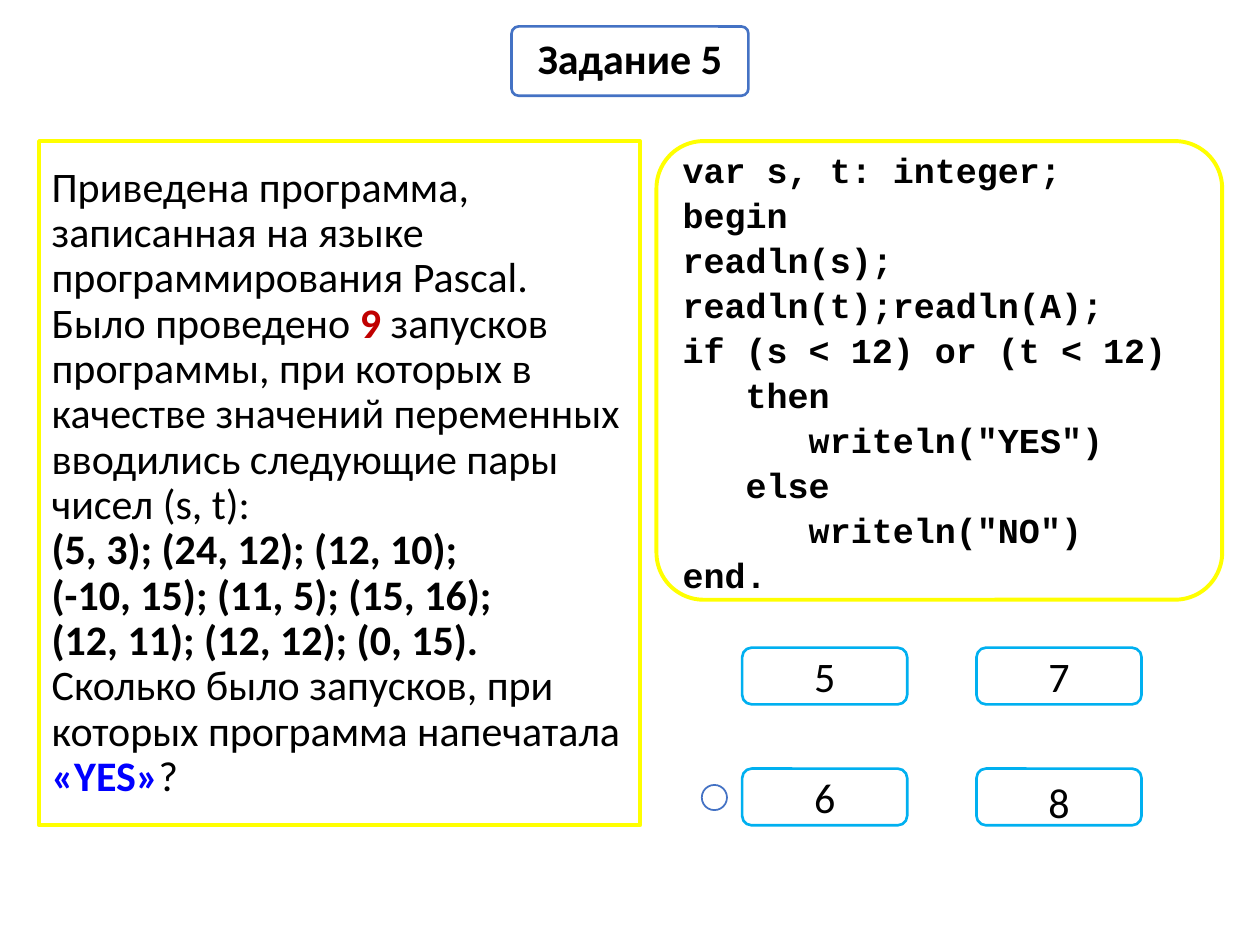
from dataclasses import dataclass

from lxml import etree
from pptx import Presentation
from pptx.dml.color import RGBColor
from pptx.enum.shapes import MSO_SHAPE
from pptx.enum.text import MSO_ANCHOR, MSO_AUTO_SIZE, PP_ALIGN
from pptx.oxml.ns import qn
from pptx.util import Inches, Pt

ROUNDED = MSO_SHAPE.ROUNDED_RECTANGLE
OVAL = MSO_SHAPE.OVAL
MIDDLE = MSO_ANCHOR.MIDDLE
NO_AUTOFIT = MSO_AUTO_SIZE.NONE
LEFT, CENTER = PP_ALIGN.LEFT, PP_ALIGN.CENTER
COMPARISON_LAYOUT = 4


@dataclass(frozen=True)
class Theme:
    paper: str = "FFFFFF"
    ink: str = "000000"
    heading: str = "4472C4"
    frame: str = "FFFF00"
    answer: str = "00B0F0"
    count: str = "C00000"
    output: str = "0000FF"
    text_font: str = "Calibri"
    code_font: str = "Courier New"
    text_size: int = 24
    code_size: int = 20
    corner: float = 0.103
    answer_corner: float = 0.1667


THEME = Theme()

# Each part of the task: text, bold, colour
TASK = [
    ("Приведена программа, записанная на языке программирования Pascal. \n"
     "Было проведено ", False, THEME.ink),
    ("9", True, THEME.count),
    (" запусков программы, при которых в качестве значений переменных "
     "вводились следующие пары чисел (s, t):\n", False, THEME.ink),
    ("(5, 3); (24, 12); (12, 10); \n(-10, 15); (11, 5); (15, 16); \n"
     "(12, 11); (12, 12); (0, 15).\n", True, THEME.ink),
    ("Сколько было запусков, при которых программа напечатала ", False, THEME.ink),
    ("«YES»", True, THEME.output),
    ("?", False, THEME.ink),
]

PROGRAM = '''var s, t: integer;
begin
readln(s);
readln(t);readln(A);
if (s < 12) or (t < 12)
   then 
      writeln("YES")
   else
      writeln("NO")
end.'''


def paint(shape, line_color, line_width):
    shape.fill.solid()
    shape.fill.fore_color.rgb = RGBColor.from_string(THEME.paper)
    shape.line.color.rgb = RGBColor.from_string(line_color)
    shape.line.width = Pt(line_width)


def add_outlined(slide, kind, box, line_color, line_width, corner=None):
    shape = slide.shapes.add_shape(kind, *map(Inches, box))
    shape.shadow.inherit = False
    if corner is not None:
        shape.adjustments[0] = corner
    paint(shape, line_color, line_width)
    return shape


def shape_placeholder(holder, box, line_color, line_width, corner):
    """Move a placeholder and give it rounded corners."""
    holder.left, holder.top, holder.width, holder.height = map(Inches, box)
    geometry = etree.SubElement(holder._element.spPr, qn("a:prstGeom"), prst="roundRect")
    guides = etree.SubElement(geometry, qn("a:avLst"))
    etree.SubElement(guides, qn("a:gd"), name="adj", fmla=f"val {round(corner * 100000)}")
    paint(holder, line_color, line_width)


def write(shape, parts, align=CENTER, spacing=1.0, after=0,
          font=THEME.text_font, size=THEME.text_size):
    frame = shape.text_frame
    frame.word_wrap = True
    frame.auto_size = NO_AUTOFIT
    frame.vertical_anchor = MIDDLE
    frame.margin_left = frame.margin_right = Inches(0.1)
    frame.margin_top = frame.margin_bottom = Inches(0.05)
    paragraph = frame.paragraphs[0]
    paragraph.alignment = align
    paragraph.line_spacing = spacing
    paragraph.space_before = Pt(0)
    paragraph.space_after = Pt(after)
    for text, bold, color in parts:
        for index, line in enumerate(text.split("\n")):
            if index:
                paragraph.add_line_break()
            if line:
                run = paragraph.add_run()
                run.text = line
                run.font.name = font
                run.font.size = Pt(size)
                run.font.bold = bold
                run.font.color.rgb = RGBColor.from_string(color)
    # Line breaks take the same size as the text around them
    paragraph.font.size = Pt(size)
    for line_break in paragraph._p.findall(qn("a:br")):
        etree.SubElement(line_break, qn("a:rPr"), sz=str(size * 100))


def add_answers(slide, first_holder):
    """Answers run down the columns; the body placeholder holds the 6."""
    for index, answer in enumerate("5678"):
        column, row = divmod(index, 2)
        box = (5.89 + 1.86 * column, 5.14 + 0.96 * row, 1.31, 0.45)
        look = (box, THEME.answer, 1.5, THEME.answer_corner)
        if answer == "6":
            button = first_holder
            shape_placeholder(button, *look)
        else:
            button = add_outlined(slide, ROUNDED, *look)
        write(button, [(answer, False, THEME.ink)], spacing=1.2 if answer == "8" else 1.0)


def main():
    deck = Presentation()
    deck.slide_width, deck.slide_height = Inches(10), Inches(7.5)
    slide = deck.slides.add_slide(deck.slide_layouts[COMPARISON_LAYOUT])
    task, answer_holder, *unused = slide.placeholders
    for holder in unused:
        holder._element.getparent().remove(holder._element)

    # Heading
    heading = add_outlined(slide, ROUNDED, (4.06, 0.21, 1.88, 0.55),
                           THEME.heading, 1.5, THEME.corner)
    write(heading, [("Задание 5", True, THEME.ink)], spacing=0.9)

    # Task statement
    shape_placeholder(task, (0.31, 1.12, 4.77, 5.43), THEME.frame, 2.25, THEME.corner)
    write(task, TASK, align=LEFT, spacing=0.9)

    # Answers and the selection mark
    add_answers(slide, answer_holder)
    add_outlined(slide, OVAL, (5.57, 6.23, 0.2, 0.2), THEME.heading, 1)

    # Program listing
    listing = add_outlined(slide, ROUNDED, (5.21, 1.12, 4.49, 3.64),
                           THEME.frame, 2.25, THEME.corner)
    write(listing, [(PROGRAM, True, THEME.ink)], align=LEFT, spacing=1.07, after=8,
          font=THEME.code_font, size=THEME.code_size)

    deck.save("out.pptx")


if __name__ == "__main__":
    main()
